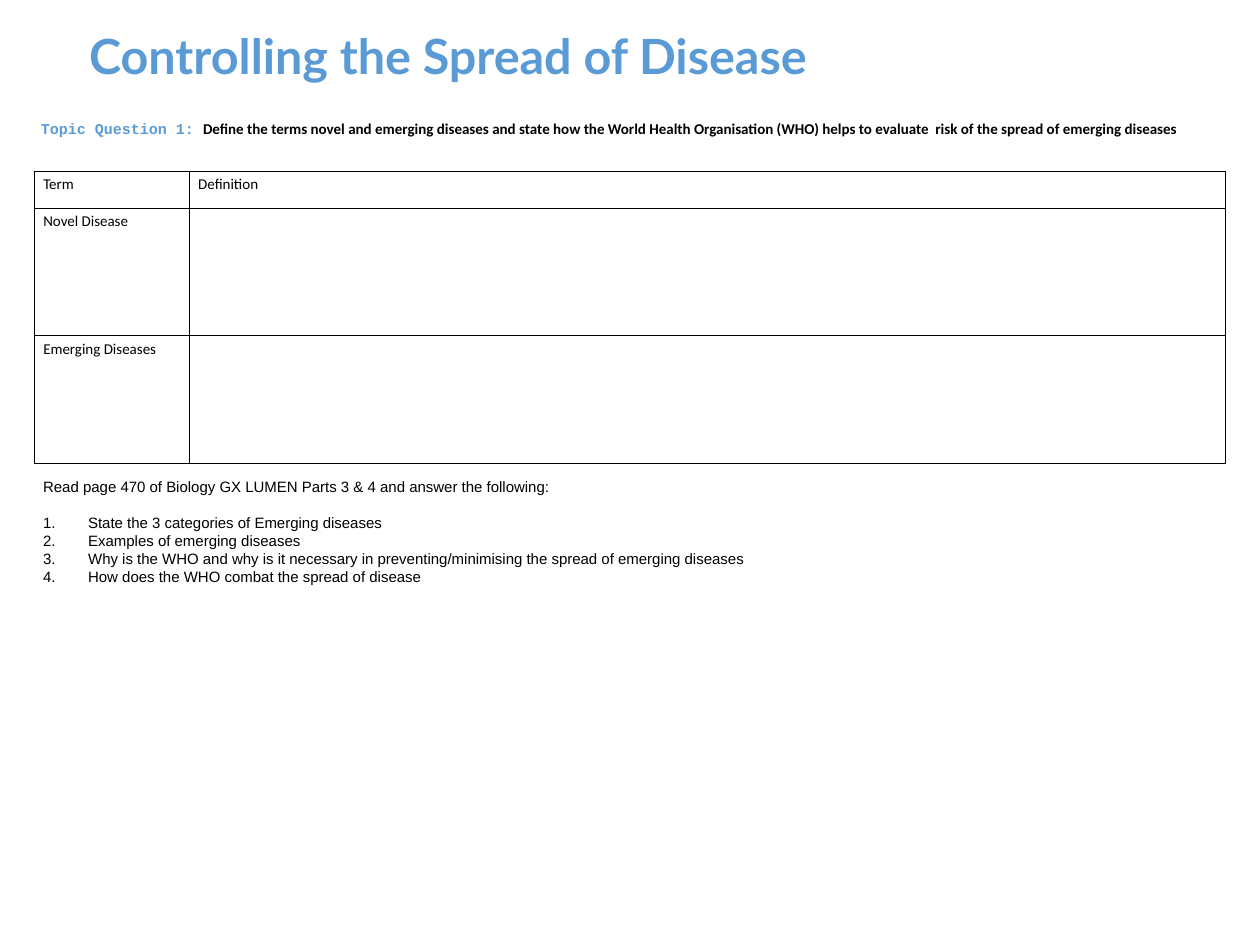
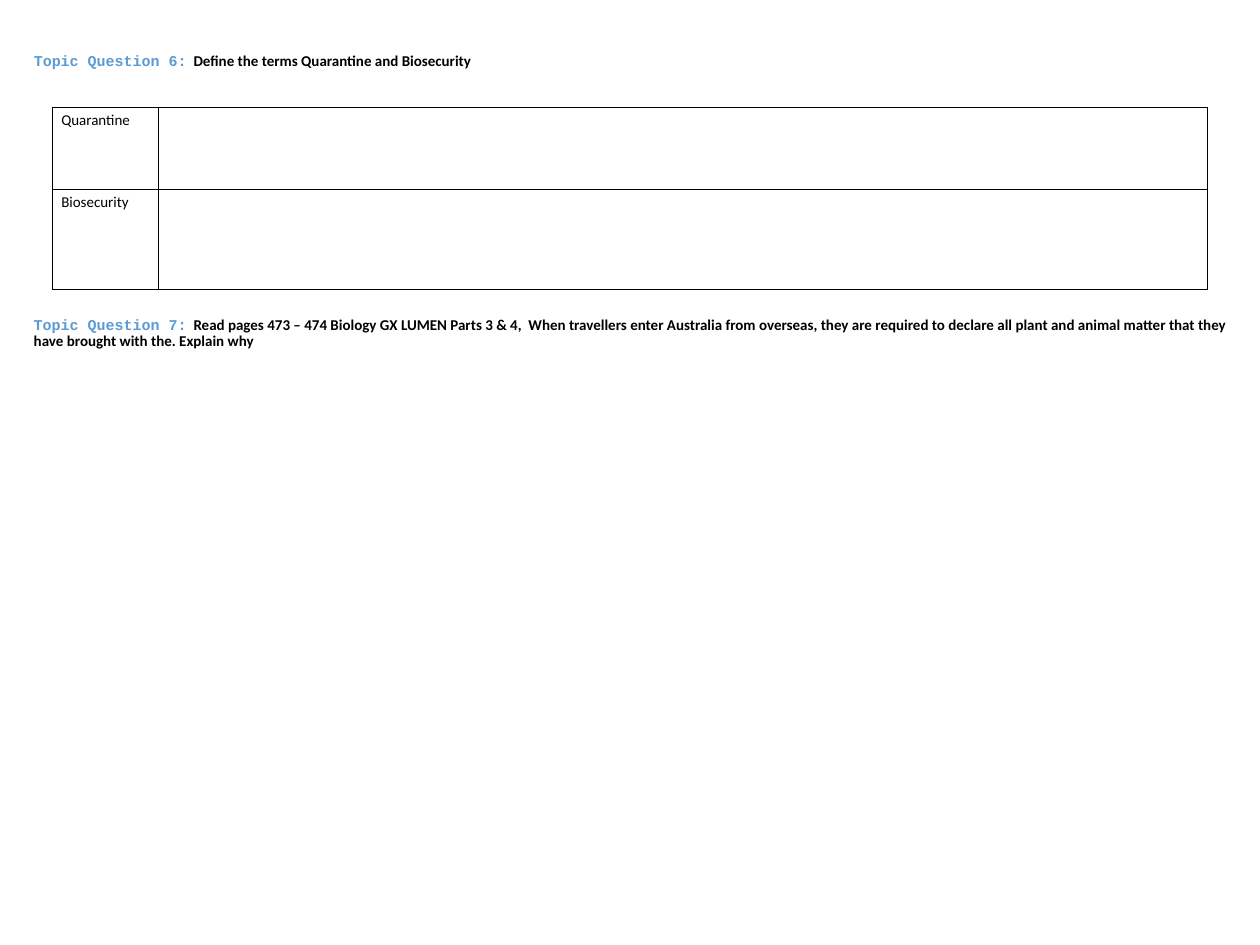
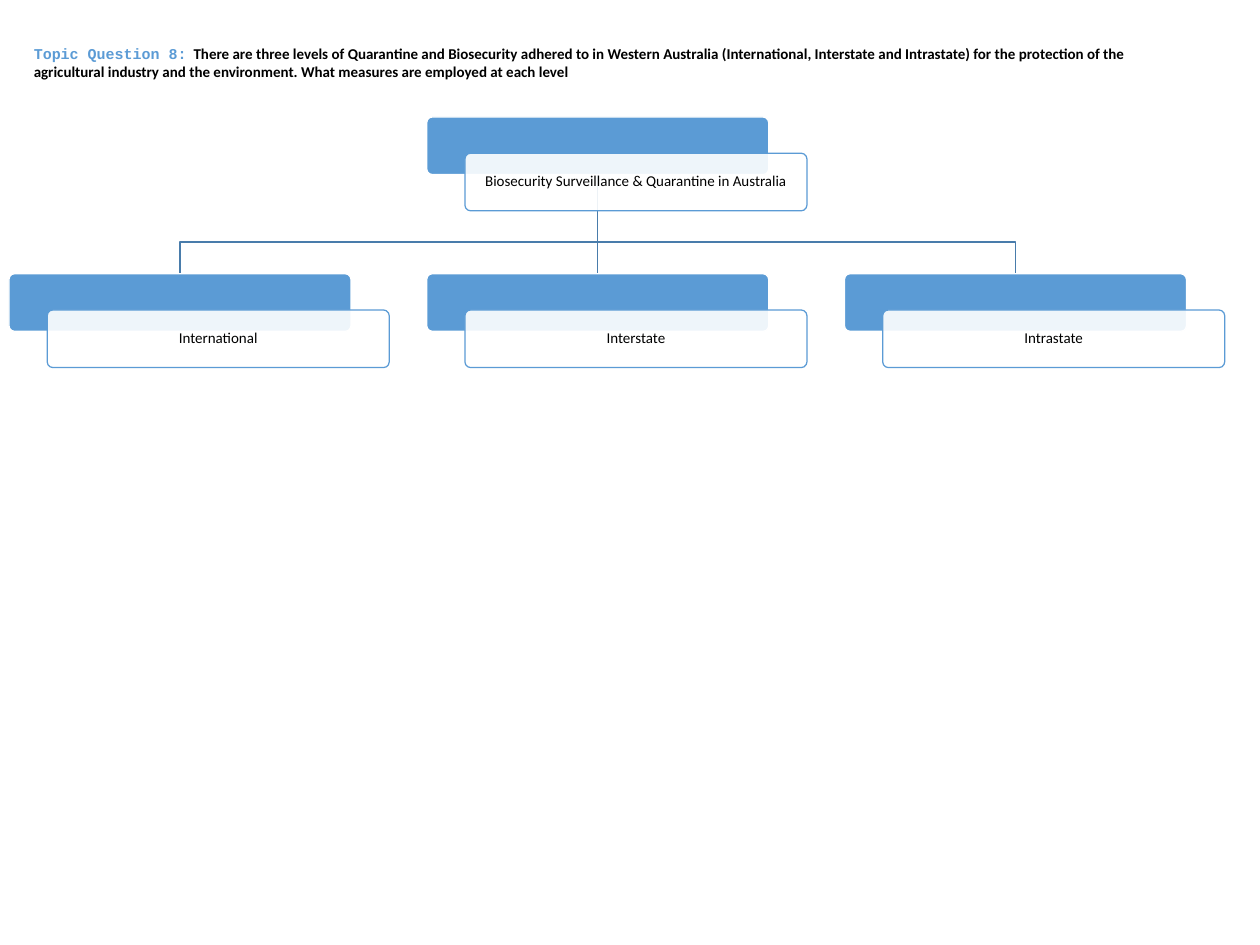
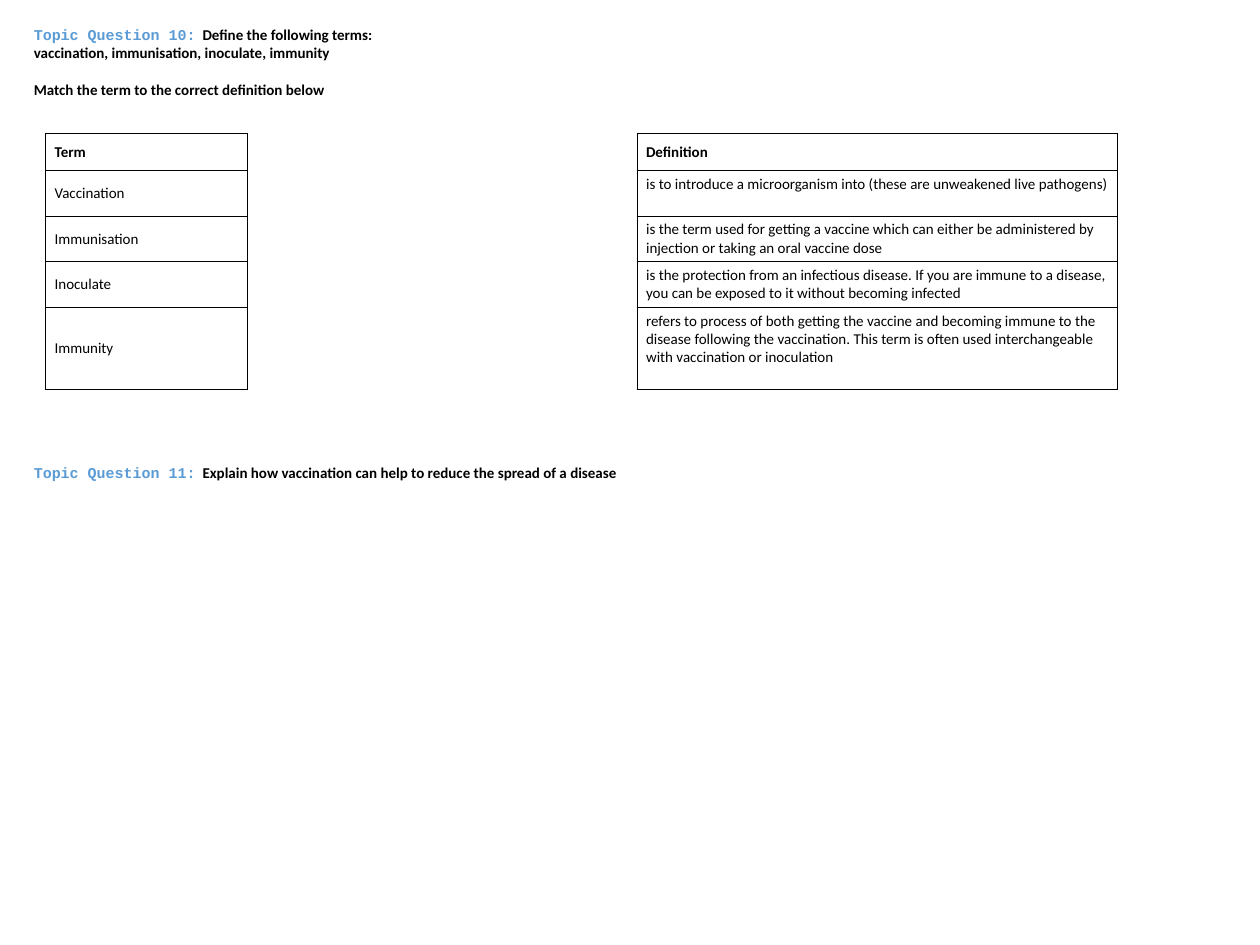
from dataclasses import dataclass

from lxml import etree
from pptx import Presentation
from pptx import util as u
from pptx.dml import color
from pptx.enum import shapes as shp
from pptx.enum import text as txt
from pptx.oxml import ns

Pt = u.Pt
TOP, MIDDLE = txt.MSO_ANCHOR.TOP, txt.MSO_ANCHOR.MIDDLE


@dataclass(frozen=True)
class Theme:
    """Colours, fonts, type sizes and shared measures."""

    accent: str = "5B9BD5"
    branch: str = "497CAB"
    ink: str = "000000"
    paper: str = "FFFFFF"
    title_font: str = "Lato"
    label_font: str = "Courier New"
    body_font: str = "Calibri"
    list_font: str = "Arial"
    title_size: float = 38.8
    body_size: float = 12
    rule: float = 1
    blank_line: float = 14.65
    question_insets: tuple = (9, 4.5, 9, 4.5)


THEME = Theme()
QUESTION_BOX = (18, 13.7, 948, 72)
TEXTBOOK = "Biology GX LUMEN Parts 3 & 4"


def rgb(code):
    """Turn a hex code into a colour."""
    return color.RGBColor.from_string(code)


def sub(parent, tag, **attributes):
    """Append a DrawingML element."""
    return etree.SubElement(parent, ns.qn(tag), attributes)


def write(paragraph, words, *, font=THEME.body_font, size=THEME.body_size,
          ink=THEME.ink, bold=False, align=None, spacing=None, before=None):
    """Add a formatted run to a paragraph."""
    run = paragraph.add_run()
    run.text = words
    run.font.name, run.font.size, run.font.bold = font, Pt(size), bold
    run.font.color.rgb = rgb(ink)
    if align is not None:
        paragraph.alignment = align
    if spacing is not None:
        paragraph.line_spacing = spacing
    if before is not None:
        paragraph.space_before = Pt(before)


def set_frame(frame, insets, anchor=TOP):
    """Set wrapping, insets and anchor of a text frame."""
    frame.word_wrap = True
    frame.vertical_anchor = anchor
    (frame.margin_left, frame.margin_top,
     frame.margin_right, frame.margin_bottom) = map(Pt, insets)
    return frame


def text_area(slide, box, insets=(7.2, 3.6, 7.2, 3.6), anchor=TOP):
    """Add a text box and return its frame."""
    return set_frame(slide.shapes.add_textbox(*map(Pt, box)).text_frame, insets, anchor)


def title(slide, box, words):
    """Place the main heading."""
    frame = text_area(slide, box, THEME.question_insets)
    write(frame.paragraphs[0], words, font=THEME.title_font, size=THEME.title_size,
          ink=THEME.accent, bold=True, align=txt.PP_ALIGN.CENTER)


def question(slide, box, label, body, *, spacing=None, anchor=MIDDLE,
             insets=THEME.question_insets):
    """Place a labelled topic question and return its frame."""
    frame = text_area(slide, box, insets, anchor)
    first = frame.paragraphs[0]
    write(first, label, font=THEME.label_font, ink=THEME.accent, bold=True)
    write(first, body, bold=True, spacing=spacing)
    return frame


def reading_list(slide, box, lead, tasks):
    """Place a lead sentence followed by numbered tasks."""
    frame = text_area(slide, box)
    write(frame.paragraphs[0], lead, font=THEME.list_font)
    for index, task in enumerate(tasks):
        item = frame.add_paragraph()
        write(item, task, font=THEME.list_font, before=0 if index else 14)
        properties = item._p.get_or_add_pPr()
        properties.set("marL", str(Pt(36)))
        properties.set("indent", str(-Pt(36)))
        sub(properties, "a:buAutoNum", type="arabicPeriod")


def set_borders(cell, sides):
    """Rule the named sides of a cell and clear the others."""
    properties = cell._tc.get_or_add_tcPr()
    for side in "LRTB":
        edge = sub(properties, f"a:ln{side}", w=str(Pt(THEME.rule)))
        if side in sides:
            sub(sub(edge, "a:solidFill"), "a:srgbClr", val=THEME.ink)
        else:
            sub(edge, "a:noFill")


def grid(slide, corner, widths, heights, rows, *, bold_header=False,
         middle_columns=(), gap_column=None):
    """Place a ruled table, with an optional unruled gap column."""
    table = slide.shapes.add_table(len(heights), len(widths), *map(
        Pt, (*corner, sum(widths), sum(heights)))).table
    table.first_row = table.horz_banding = False
    for column, width in zip(table.columns, widths):
        column.width = Pt(width)
    for r, (height, entries) in enumerate(zip(heights, rows)):
        table.rows[r].height = Pt(height)
        for c, entry in enumerate(entries):
            cell = table.cell(r, c)
            header = bold_header and r == 0
            set_borders(cell, "LR" if c == gap_column else "LRTB")
            cell.fill.background()
            cell.vertical_anchor = MIDDLE if header or c in middle_columns else TOP
            if entry:
                write(cell.text_frame.paragraphs[0], entry, bold=header)


def card(slide, box, *, fill, line):
    """Place a rounded card."""
    plate = slide.shapes.add_shape(shp.MSO_SHAPE.ROUNDED_RECTANGLE, *map(Pt, box))
    plate.adjustments[0] = 0.1
    plate.shadow.inherit = False
    plate.fill.solid()
    plate.fill.fore_color.rgb = rgb(fill)
    plate.line.color.rgb = rgb(line)
    plate.line.width = Pt(THEME.rule)
    return plate


def level(slide, box, words):
    """Place a level as a labelled card over a solid one, returning the solid one."""
    left, top, width, height = box
    back = card(slide, box, fill=THEME.accent, line=THEME.paper)
    front = card(slide, (left + 30.6, top + 29, width, height),
                 fill=THEME.paper, line=THEME.accent)
    tint = front.fill._xPr.find(ns.qn("a:solidFill"))[0]
    sub(tint, "a:alpha", val="90000")
    frame = set_frame(front.text_frame, (5, 5, 5, 5), MIDDLE)
    write(frame.paragraphs[0], words, align=txt.PP_ALIGN.CENTER, spacing=0.9)
    return back


def style_branch(branch):
    """Apply the branch line style."""
    branch.line.color.rgb = rgb(THEME.branch)
    branch.line.width = Pt(THEME.rule)


def hierarchy(slide, box, root, children):
    """Place a root level above evenly spaced child levels."""
    left, top, width, height = box
    card_width, card_height, drop = 273.6, 46.1, 54
    step = (width - 30.6 - card_width) / (len(children) - 1)
    child_top = top + height - card_height - 29
    lefts = [left + step * index for index in range(len(children))]
    centres = [x + card_width / 2 for x in lefts]
    middle = len(children) // 2
    root_bottom = top + card_height
    for centre in centres[:middle] + centres[middle + 1:]:
        path_builder = slide.shapes.build_freeform(Pt(centres[middle]), Pt(root_bottom))
        path_builder.add_line_segments(
            [(Pt(x), Pt(y)) for x, y in ((centres[middle], root_bottom + drop),
                                         (centre, root_bottom + drop),
                                         (centre, child_top))], close=False)
        branch = path_builder.convert_to_shape()
        branch.fill.background()
        branch.shadow.inherit = False
        style_branch(branch)
    trunk = slide.shapes.add_connector(
        shp.MSO_CONNECTOR.STRAIGHT, Pt(centres[middle]), Pt(root_bottom),
        Pt(centres[middle]), Pt(child_top))
    style_branch(trunk)
    sub(trunk._element.spPr, "a:effectLst")
    parent = level(slide, (lefts[middle], top, card_width, card_height), root)
    plates = [level(slide, (x, child_top, card_width, card_height), words)
              for x, words in zip(lefts, children)]
    trunk.begin_connect(parent, 2)
    trunk.end_connect(plates[middle], 0)


def emerging_slide(slide):
    """Build the novel and emerging diseases slide."""
    title(slide, (13, 16.6, 690.5, 31), "Controlling the Spread of Disease")
    question(slide, (23.8, 95.8, 952.6, 69.8), "Topic Question 1: ",
             "Define the terms novel and emerging diseases and state how the World Health "
             "Organisation (WHO) helps to evaluate  risk of the spread of emerging diseases",
             anchor=TOP, insets=(9, 0, 9, 4.5))
    grid(slide, (27.4, 137), (124, 829), (29.5, 102, 102),
         (("Term", "Definition"), ("Novel Disease", ""), ("Emerging Diseases", "")))
    reading_list(slide, (27.4, 378.7, 742.3, 108.7),
                 f"Read page 470 of {TEXTBOOK} and answer the following:",
                 ("State the 3 categories of Emerging diseases",
                  "Examples of emerging diseases",
                  "Why is the WHO and why is it necessary in preventing/minimising "
                  "the spread of emerging diseases",
                  "How does the WHO combat the spread of disease"))


def quarantine_slide(slide):
    """Build the quarantine and biosecurity slide."""
    question(slide, QUESTION_BOX, "Topic Question 6:",
             "  Define the terms Quarantine and Biosecurity", spacing=0.9)
    grid(slide, (41.8, 85.7), (85, 839.5), (65.6, 80),
         (("Quarantine", ""), ("Biosecurity", "")))
    question(slide, (18, 231, 981.4, 72), "Topic Question 7:",
             f"  Read pages 473 – 474 {TEXTBOOK},  When travellers enter "
             "Australia from overseas, they are required to declare all plant and animal "
             "matter that they have brought with the. Explain why", spacing=0.9)


def levels_slide(slide):
    """Build the three levels of quarantine slide."""
    question(slide, QUESTION_BOX, "Topic Question 8:",
             "  There are three levels of Quarantine and Biosecurity adhered to in Western "
             "Australia (International, Interstate and Intrastate) for the protection of the "
             "agricultural industry and the environment. What measures are employed at each "
             "level")
    hierarchy(slide, (7.2, 93.6, 972.6, 200.5),
              "Biosecurity Surveillance & Quarantine in Australia",
              ("International", "Interstate", "Intrastate"))


def vaccination_slide(slide):
    """Build the vaccination terms slide."""
    frame = question(slide, QUESTION_BOX, "Topic Question 10:",
                     "  Define the following terms:")
    write(frame.add_paragraph(), "vaccination, immunisation, inoculate, immunity", bold=True)
    write(frame.add_paragraph(), "Match the term to the correct definition below",
          bold=True, before=THEME.blank_line)
    grid(slide, (36.5, 107), (161.8, 311.4, 384.6), (29.5, 36.5, 36.5, 36.5, 66),
         (("Term", "", "Definition"),
          ("Vaccination", "",
           "is to introduce a microorganism into (these are unweakened live pathogens)"),
          ("Immunisation", "",
           "is the term used for getting a vaccine which can either be administered by "
           "injection or taking an oral vaccine dose"),
          ("Inoculate", "",
           "is the protection from an infectious disease. If you are immune to a disease, "
           "you can be exposed to it without becoming infected"),
          ("Immunity", "",
           "refers to process of both getting the vaccine and becoming immune to the "
           "disease following the vaccination. This term is often used interchangeable "
           "with vaccination or inoculation")),
         bold_header=True, middle_columns=(0,), gap_column=1)
    question(slide, (18, 342, 948, 72), "Topic Question 11:",
             "  Explain how vaccination can help to reduce the spread of a disease")


def main():
    """Build and save the slides."""
    deck = Presentation()
    deck.slide_width, deck.slide_height = Pt(1008), Pt(756)
    for build in (emerging_slide, quarantine_slide, levels_slide, vaccination_slide):
        build(deck.slides.add_slide(deck.slide_layouts[6]))
    deck.save("out.pptx")


if __name__ == "__main__":
    main()
